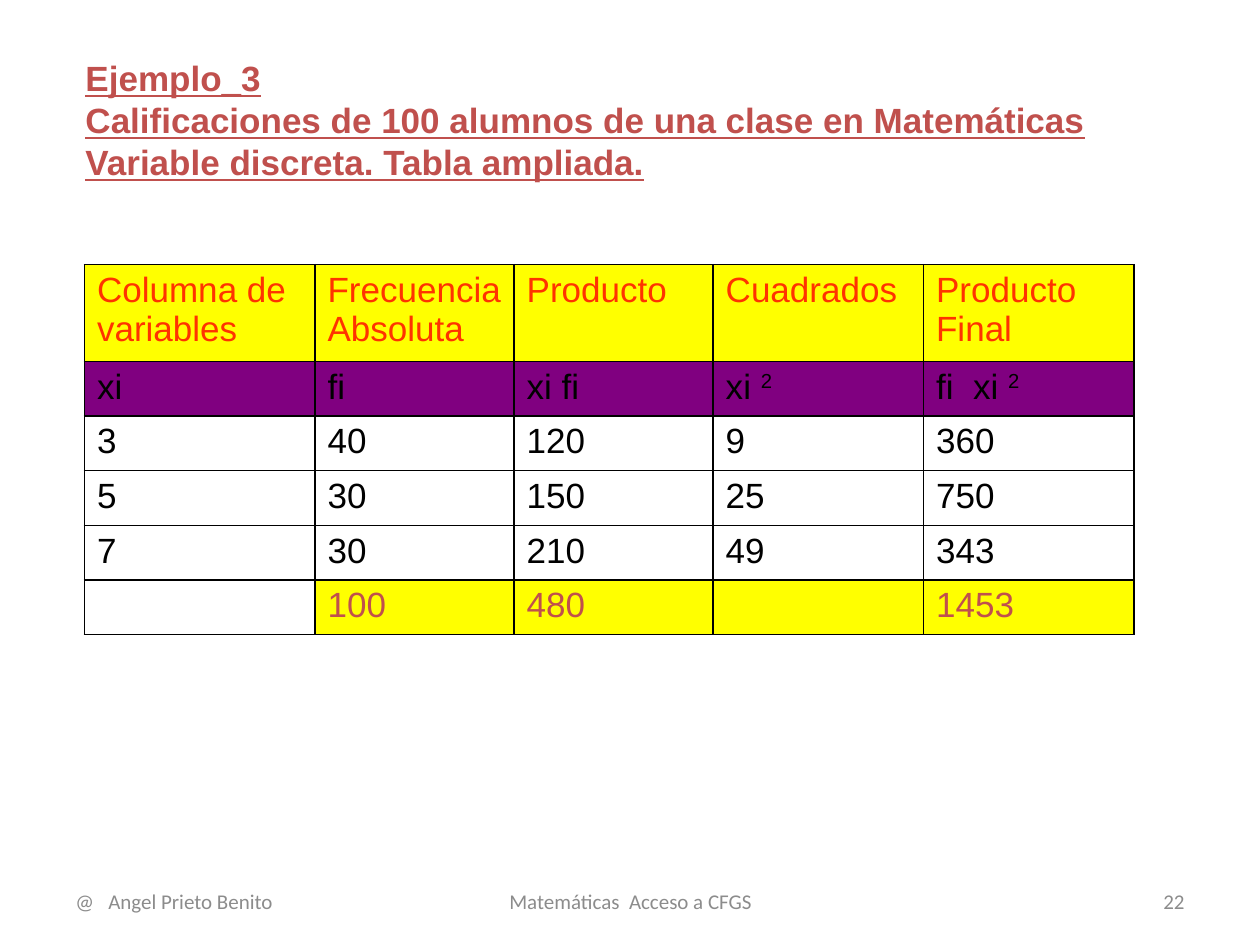
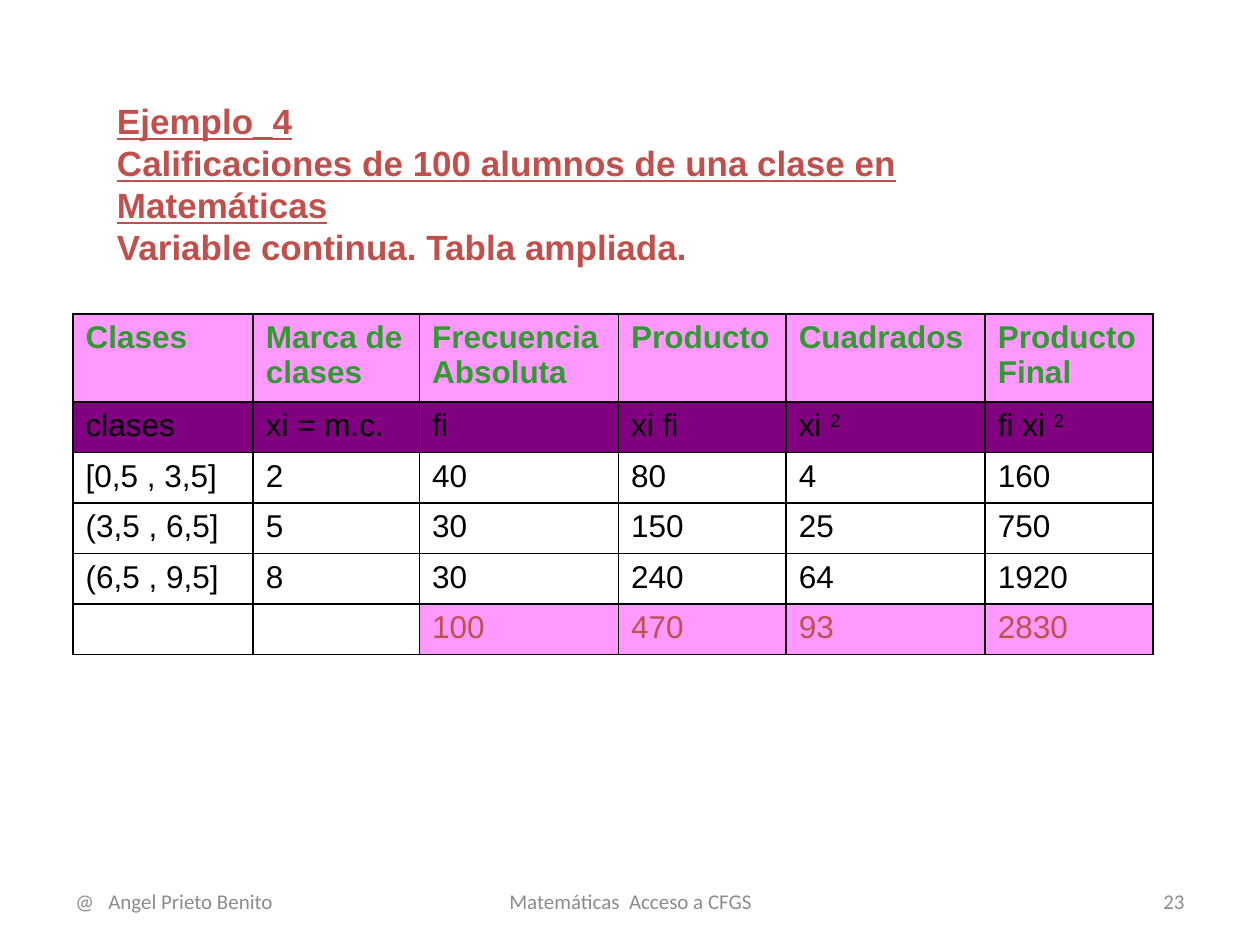
from pptx import Presentation
from pptx.dml.color import RGBColor
from pptx.enum.text import MSO_ANCHOR, PP_ALIGN
from pptx.oxml import parse_xml
from pptx.oxml.ns import nsdecls
from pptx.util import Inches, Pt

LEFT, CENTER, RIGHT = PP_ALIGN.LEFT, PP_ALIGN.CENTER, PP_ALIGN.RIGHT
MIDDLE = MSO_ANCHOR.MIDDLE

COLORS = {
    "title": "C0504D", "footer": "8C8C8C", "text": "000000",
    "symbols": "800080", "border": "000000",
    "yellow": "FFFF00", "orange": "FF3300",
    "pink": "FF99FF", "green": "339933",
}

# Contents of each slide; "^" marks a superscript
SLIDES = [
    {
        "number": "22",
        "title": ["Ejemplo_3",
                  "Calificaciones de 100 alumnos de una clase en Matemáticas",
                  "Variable discreta. Tabla ampliada."],
        "title_box": (0.58, 0.4, 8.98, 1.1), "underlined": 3,
        "table_at": (0.67, 2.1), "size": 20,
        "cols": [1.83, 1.58, 1.58, 1.67, 1.67],
        "header_height": 0.76, "row_height": 0.43,
        "band": "yellow", "header": "orange", "header_bold": False, "label_cols": 1,
        "rows": [
            ["Columna de variables", "Frecuencia\nAbsoluta", "Producto", "Cuadrados",
             "Producto\nFinal"],
            ["xi", "fi", "xi fi", "xi ^2", "fi  xi ^2"],
            ["3", "40", "120", "9", "360"],
            ["5", "30", "150", "25", "750"],
            ["7", "30", "210", "49", "343"],
            ["", "100", "480", "", "1453"],
        ],
    },
    {
        "number": "23",
        "title": ["Ejemplo_4",
                  "Calificaciones de 100 alumnos de una clase en Matemáticas",
                  "Variable continua. Tabla ampliada."],
        "title_box": (0.83, 0.91, 8.11, 1.1), "underlined": 2,
        "table_at": (0.58, 2.49), "size": 18,
        "cols": [1.43, 1.32, 1.58, 1.33, 1.58, 1.33],
        "header_height": 0.7, "row_height": 0.4,
        "band": "pink", "header": "green", "header_bold": True, "label_cols": 2,
        "rows": [
            ["Clases", "Marca de clases", "Frecuencia\nAbsoluta", "Producto", "Cuadrados",
             "Producto\nFinal"],
            ["clases", "xi = m.c.", "fi", "xi fi", "xi ^2", "fi xi ^2"],
            ["[0,5 , 3,5]", "2", "40", "80", "4", "160"],
            ["(3,5 , 6,5]", "5", "30", "150", "25", "750"],
            ["(6,5 , 9,5]", "8", "30", "240", "64", "1920"],
            ["", "", "100", "470", "93", "2830"],
        ],
    },
]


def write(tf, lines, size, color, font="Arial", bold=False, align=LEFT):
    """Write one paragraph per line, raising whatever follows a caret."""
    for i, line in enumerate(lines):
        p = tf.paragraphs[0] if i == 0 else tf.add_paragraph()
        p.alignment = align
        p.font.size = Pt(size)
        for level, part in enumerate(line.split("^")):
            r = p.add_run()
            r.text = part
            r.font.size = Pt(size)
            r.font.name = font
            r.font.bold = bold
            r.font.color.rgb = RGBColor.from_string(COLORS[color])
            if level:
                r.font._element.set("baseline", "30000")


def add_text(s, box, lines, size, color, **style):
    """Add a wrapped, vertically centred text box."""
    tf = s.shapes.add_textbox(*map(Inches, box)).text_frame
    tf.word_wrap = True
    tf.vertical_anchor = MIDDLE
    write(tf, lines, size, color, **style)
    return tf


prs = Presentation()
prs.slide_width, prs.slide_height = Inches(10), Inches(7.5)

for data in SLIDES:
    s = prs.slides.add_slide(prs.slide_layouts[6])

    # Footer
    for left, width, text, align in [
        (0.5, 2.33, "@   Angel Prieto Benito", LEFT),
        (3.42, 3.17, "Matemáticas  Acceso a CFGS", CENTER),
        (7.17, 2.33, data["number"], RIGHT),
    ]:
        add_text(s, (left, 6.95, width, 0.4), [text], 12, "footer",
                 font="Calibri", align=align)

    # Title
    tf = add_text(s, data["title_box"], data["title"], 20, "title", bold=True)
    for p in tf.paragraphs[:data["underlined"]]:
        p.runs[0].font.underline = True

    # Table grid
    rows, cols = data["rows"], data["cols"]
    heights = [data["header_height"]] + [data["row_height"]] * (len(rows) - 1)
    left, top = data["table_at"]
    table = s.shapes.add_table(len(rows), len(cols), Inches(left), Inches(top),
                               Inches(sum(cols)), Inches(sum(heights))).table
    table.first_row = table.horz_banding = False
    for column, width in zip(table.columns, cols):
        column.width = Inches(width)
    for row, height in zip(table.rows, heights):
        row.height = Inches(height)

    # Table cells
    last = len(rows) - 1
    for i, row in enumerate(rows):
        for j, text in enumerate(row):
            cell = table.cell(i, j)
            tcPr = cell._tc.get_or_add_tcPr()
            for side in "LRTB":
                tcPr.append(parse_xml(
                    f'<a:ln{side} {nsdecls("a")} w="12700"><a:solidFill>'
                    f'<a:srgbClr val="{COLORS["border"]}"/></a:solidFill></a:ln{side}>'))
            fill, color = None, "text"
            if i == 0:
                fill, color = data["band"], data["header"]
            elif i == 1:
                fill = "symbols"
            elif i == last and j >= data["label_cols"]:
                fill, color = data["band"], "title"
            if fill:
                cell.fill.solid()
                cell.fill.fore_color.rgb = RGBColor.from_string(COLORS[fill])
            else:
                cell.fill.background()
            if text:
                write(cell.text_frame, text.split("\n"), data["size"], color,
                      bold=i == 0 and data["header_bold"])

prs.save("out.pptx")
